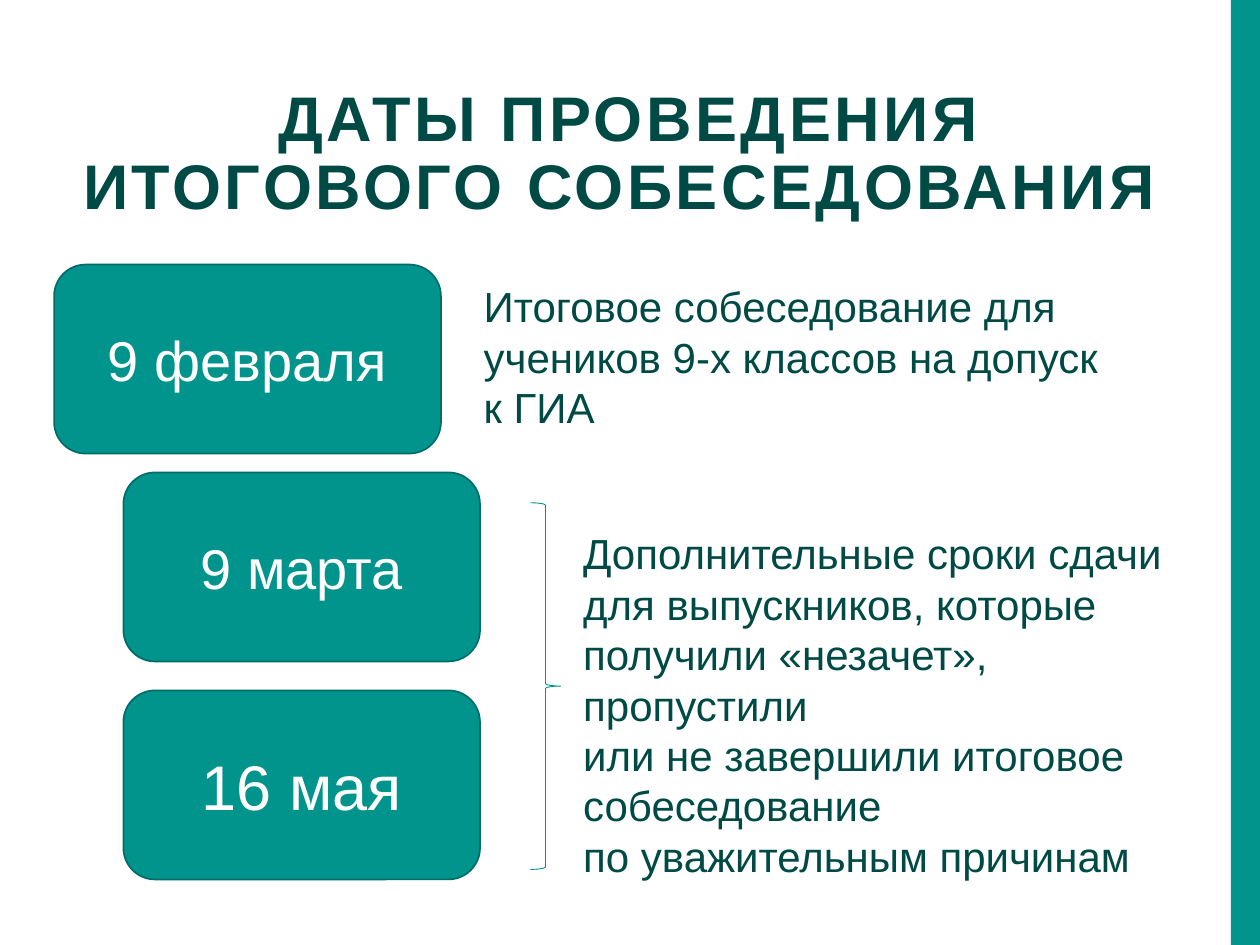
from pptx import Presentation
from pptx.dml.color import RGBColor
from pptx.enum.shapes import MSO_SHAPE
from pptx.enum.text import MSO_ANCHOR, MSO_AUTO_SIZE, PP_ALIGN
from pptx.util import Inches, Pt

TEAL = RGBColor(0x00, 0x94, 0x8C)
TEAL_EDGE = RGBColor(0x00, 0x6D, 0x68)
DARK_TEAL = RGBColor(0x00, 0x4A, 0x46)
WHITE = RGBColor(0xFF, 0xFF, 0xFF)
FONT = "Arial"


def write_text(frame, lines, size=24, color=DARK_TEAL, bold=False,
               align=PP_ALIGN.LEFT, anchor=MSO_ANCHOR.TOP, line_spacing=None,
               letter_spacing=None):
    frame.word_wrap = True
    frame.vertical_anchor = anchor
    for index, line in enumerate(lines):
        para = frame.add_paragraph() if index else frame.paragraphs[0]
        para.alignment = align
        if line_spacing:
            para.line_spacing = line_spacing
        span = para.add_run()
        span.text = line
        span.font.name = FONT
        span.font.size = Pt(size)
        span.font.bold = bold
        span.font.color.rgb = color
        if letter_spacing:
            span.font._element.set("spc", str(letter_spacing * 100))


def add_shape(page, kind, box, fill=None, edge=None, width=1):
    shape = page.shapes.add_shape(kind, *map(Inches, box))
    shape.shadow.inherit = False
    if fill is None:
        shape.fill.background()
    else:
        shape.fill.solid()
        shape.fill.fore_color.rgb = fill
    if edge is None:
        shape.line.fill.background()
    else:
        shape.line.color.rgb = edge
        shape.line.width = Pt(width)
    return shape


def place_title(page, box, text):
    title = page.shapes.title
    title.left, title.top, title.width, title.height = map(Inches, box)
    title.text_frame.auto_size = MSO_AUTO_SIZE.NONE
    write_text(title.text_frame, [text], size=36, bold=True,
               align=PP_ALIGN.CENTER, anchor=MSO_ANCHOR.MIDDLE,
               line_spacing=0.9, letter_spacing=2)


def place_date(page, box, text, size=32):
    card = add_shape(page, MSO_SHAPE.ROUNDED_RECTANGLE, box, TEAL, TEAL_EDGE)
    write_text(card.text_frame, [text], size=size, color=WHITE,
               align=PP_ALIGN.CENTER, anchor=MSO_ANCHOR.MIDDLE)


def place_note(page, box, lines):
    note = page.shapes.add_textbox(*map(Inches, box))
    write_text(note.text_frame, lines)
    note.text_frame.auto_size = MSO_AUTO_SIZE.SHAPE_TO_FIT_TEXT


def main():
    deck = Presentation()
    deck.slide_width, deck.slide_height = Inches(10), Inches(7.5)
    page = deck.slides.add_slide(deck.slide_layouts[5])
    page.background.fill.solid()
    page.background.fill.fore_color.rgb = WHITE

    # Side stripe and title
    add_shape(page, MSO_SHAPE.RECTANGLE, (9.77, 0, 0.23, 7.5), TEAL)
    place_title(page, (0.5, 0.6, 9, 1.26),
                "ДАТЫ ПРОВЕДЕНИЯ ИТОГОВОГО СОБЕСЕДОВАНИЯ ")

    # Main date
    place_date(page, (0.43, 2.1, 3.07, 1.5), "9 февраля")
    place_note(page, (3.74, 2.18, 5.98, 1.31), [
        "Итоговое собеседование для учеников 9-х классов на допуск",
        "к ГИА",
    ])

    # Additional dates, joined by a brace
    extra_dates = [("9 марта", 32), ("16 мая", 36)]
    for row, (text, size) in enumerate(extra_dates):
        place_date(page, (0.98, 3.75 + row * 1.73, 2.83, 1.5), text, size)
    place_note(page, (4.53, 4.14, 5.28, 2.93), [
        "Дополнительные сроки сдачи для выпускников, которые получили "
        "«незачет», пропустили",
        "или не завершили итоговое собеседование",
        "по уважительным причинам",
    ])
    add_shape(page, MSO_SHAPE.RIGHT_BRACE, (4.21, 3.99, 0.24, 2.91),
              edge=TEAL, width=0.5)

    deck.save("out.pptx")


if __name__ == "__main__":
    main()
